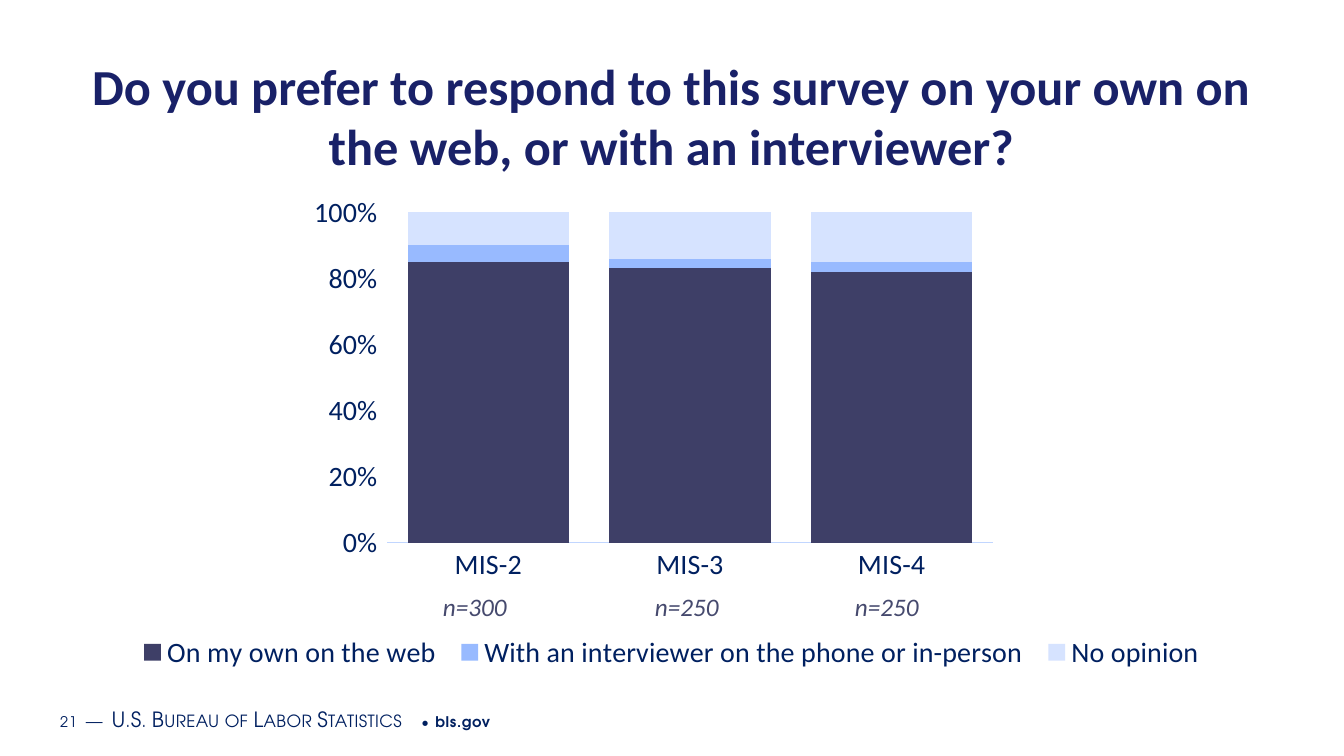
from lxml.etree import SubElement
from pptx import Presentation
from pptx.chart.data import CategoryChartData
from pptx.dml.color import RGBColor
from pptx.enum.chart import XL_CHART_TYPE as ChartType
from pptx.enum.chart import XL_LEGEND_POSITION as LegendPosition
from pptx.enum.chart import XL_TICK_MARK as TickMark
from pptx.enum.text import MSO_ANCHOR as Anchor
from pptx.enum.text import MSO_AUTO_SIZE as AutoSize
from pptx.enum.text import PP_ALIGN as Align
from pptx.oxml import parse_xml
from pptx.oxml.ns import nsdecls, qn
from pptx.util import Pt

PX = 914400 / 100.8
NAVY, TITLE_BLUE, NOTE_GREY, AXIS_BLUE = "002060", "192168", "464A6E", "C1D6FF"
BODY_FONT, FOOTER_FONT = "Calibri", "TeX Gyre Adventor"

WAVES = ["MIS-2", "MIS-3", "MIS-4"]
ANSWERS = [
    ("On my own on the web", [0.85, 0.83, 0.82], "3E3F67"),
    ("With an interviewer on the phone or in-person", [0.05, 0.03, 0.03], "98BAFF"),
    ("No opinion", [0.10, 0.14, 0.15], "D6E3FF"),
]
SAMPLE_SIZES = [("n=300", 11), ("n=250", 223), ("n=250", 423)]  # text, tab in px

# Footer runs: text, size, character spacing, small caps, bold
FOOTER = [
    ("21", 10.5, 50, False, False),
    ("\u2004", 16, 50, False, False),
    ("—", 15, 30, True, False),
    ("\u2004", 16, 50, False, False),
    ("U.S. Bureau of Labor Statistics", 15, 30, True, False),
    ("\u2004•\u2004", 10.5, 50, False, False),
    ("bls.gov", 10.5, 50, False, True),
]


def px(length):
    return round(length * PX)


def color(value):
    return RGBColor.from_string(value)


def style_font(font, name, size, value, bold=False, italic=False):
    font.name, font.size = name, Pt(size)
    font.color.rgb = color(value)
    font.bold, font.italic = bold, italic


def add_box(page, left, top, width, height):
    box = page.shapes.add_textbox(px(left), px(top), px(width), px(height))
    box.text_frame.word_wrap = True
    return box.text_frame


def set_title(page, text):
    title = page.shapes.title
    title.left, title.top, title.width, title.height = map(px, (54, 50, 1235, 89))
    frame = title.text_frame
    frame.text = text
    frame.auto_size = AutoSize.NONE
    frame.vertical_anchor = Anchor.TOP
    para = frame.paragraphs[0]
    para.alignment = Align.CENTER
    style_font(para.runs[0].font, BODY_FONT, 36, TITLE_BLUE, bold=True)


def set_layout(parent, index, x, y, width, height, inner=False):
    for old in parent.findall(qn("c:layout")):
        parent.remove(old)
    target = '<c:layoutTarget val="inner"/>' if inner else ""
    parent.insert(index, parse_xml(
        f'<c:layout {nsdecls("c")}><c:manualLayout>{target}'
        '<c:xMode val="edge"/><c:yMode val="edge"/>'
        f'<c:x val="{x}"/><c:y val="{y}"/><c:w val="{width}"/><c:h val="{height}"/>'
        '</c:manualLayout></c:layout>'))


def add_preference_chart(page):
    data = CategoryChartData(number_format="0%")
    data.categories = WAVES
    for name, shares, _ in ANSWERS:
        data.add_series(name, shares)
    chart = page.shapes.add_chart(ChartType.COLUMN_STACKED, px(54), px(195),
                                  px(1235), px(561), data).chart
    chart.has_title = False
    style_font(chart.font, BODY_FONT, 20, NAVY)

    # Columns
    plot = chart.plots[0]
    plot.gap_width, plot.overlap, plot.vary_by_categories = 25, 100, False
    for series, (_, _, fill) in zip(plot.series, ANSWERS):
        series.format.fill.solid()
        series.format.fill.fore_color.rgb = color(fill)

    # Axes
    waves, shares = chart.category_axis, chart.value_axis
    waves.major_tick_mark = TickMark.NONE
    waves.format.line.color.rgb = color(AXIS_BLUE)
    waves.format.line.width = Pt(0.75)
    shares.minimum_scale, shares.maximum_scale, shares.major_unit = 0, 1, 0.2
    shares.has_major_gridlines = False
    shares.major_tick_mark = TickMark.OUTSIDE
    shares.tick_labels.number_format = "0%"
    shares.tick_labels.number_format_is_linked = False
    shares.format.line.fill.background()

    # Legend and plot area
    chart.has_legend = True
    legend = chart.legend
    legend.position = LegendPosition.BOTTOM
    legend.include_in_layout = False
    for part in (waves.tick_labels, shares.tick_labels, legend):
        style_font(part.font, BODY_FONT, 20, NAVY)
    set_layout(legend._element, 1, 0.06, 0.78, 0.88, 0.07)
    plot_area = chart._chartSpace.find(".//" + qn("c:plotArea"))
    set_layout(plot_area, 0, 0.27, 0.03, 0.49, 0.59, inner=True)


def add_sample_sizes(page):
    para = add_box(page, 422, 586, 609, 56).paragraphs[0]
    para.text = "".join("\t" + text for text, _ in SAMPLE_SIZES)
    tabs = SubElement(para._p.get_or_add_pPr(), qn("a:tabLst"))
    for _, stop in SAMPLE_SIZES:
        SubElement(tabs, qn("a:tab"), pos=str(px(stop)), algn="l")
    for span in para.runs:
        style_font(span.font, BODY_FONT, 18, NOTE_GREY, italic=True)


def add_footer(page):
    frame = add_box(page, 53, 699, 854, 40)
    frame.vertical_anchor = Anchor.MIDDLE
    frame.margin_left = frame.margin_right = px(7)
    frame.margin_top = frame.margin_bottom = px(4)
    para = frame.paragraphs[0]
    for text, size, spacing, small_caps, bold in FOOTER:
        span = para.add_run()
        span.text = text
        style_font(span.font, FOOTER_FONT, size, NAVY, bold=bold)
        properties = span._r.get_or_add_rPr()
        properties.set("spc", str(spacing))
        if small_caps:
            properties.set("cap", "small")


def main():
    deck = Presentation()
    deck.slide_width, deck.slide_height = px(1344), px(756)
    page = deck.slides.add_slide(deck.slide_layouts[5])
    add_footer(page)
    set_title(page, "Do you prefer to respond to this survey on your own on "
                    "the web, or with an interviewer?")
    add_preference_chart(page)
    add_sample_sizes(page)
    deck.save("out.pptx")


if __name__ == "__main__":
    main()
